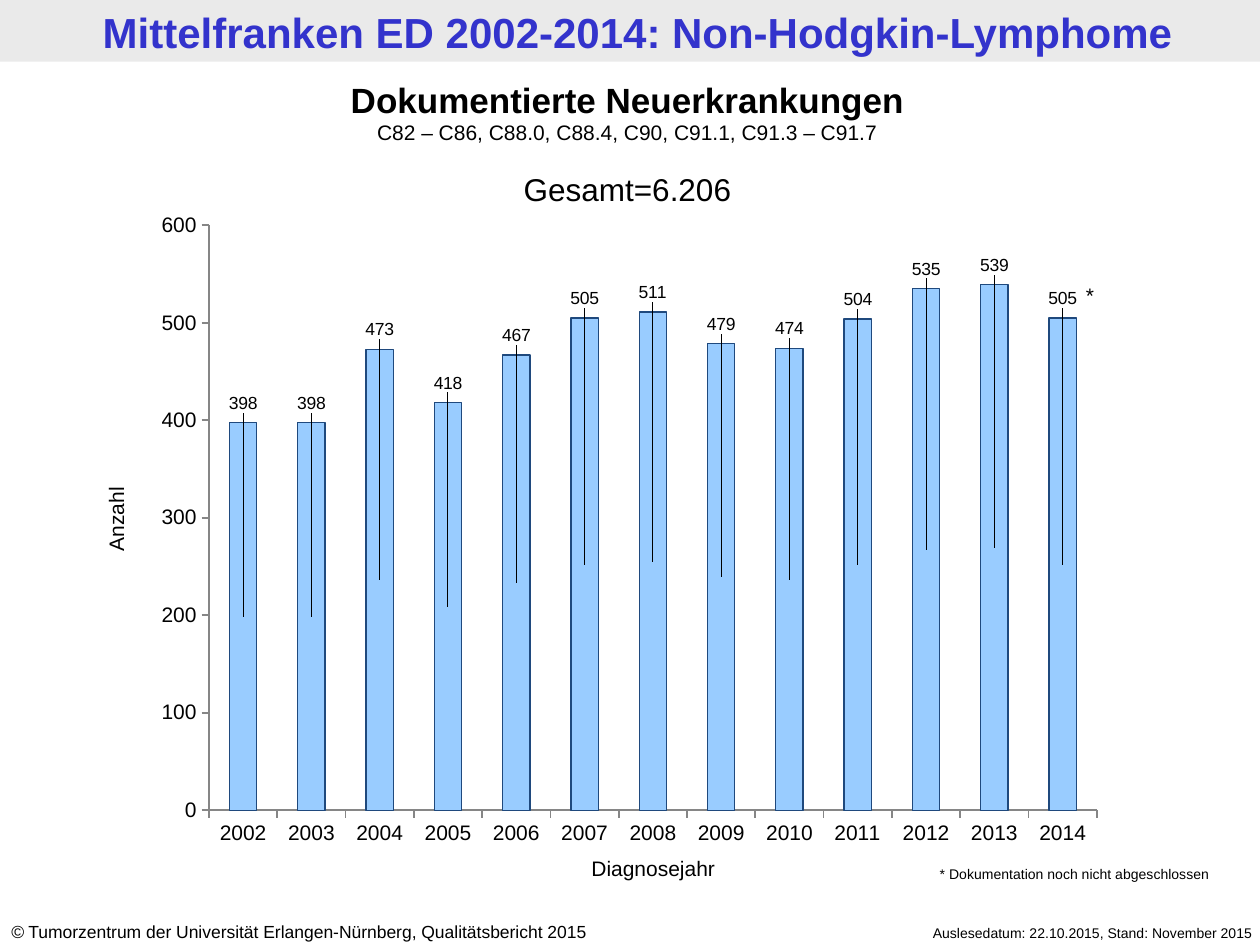
"""Build the slide on newly documented non-Hodgkin lymphomas in Mittelfranken."""
from dataclasses import dataclass

from lxml.etree import SubElement
from pptx import Presentation
from pptx.chart.data import CategoryChartData
from pptx.dml.color import RGBColor
from pptx.enum.chart import XL_CHART_TYPE, XL_LABEL_POSITION, XL_TICK_MARK
from pptx.enum.shapes import MSO_SHAPE
from pptx.enum.text import MSO_ANCHOR, PP_ALIGN
from pptx.oxml.ns import qn
from pptx.util import Inches, Pt

FONT = "Arial"
COLORS = {
    "band": "EAEAEA",
    "title": "3333CC",
    "text": "000000",
    "bar": "99CCFF",
    "bar_line": "1F497D",
    "axis": "868686",
}
YEARS = range(2002, 2015)
CASES = (398, 398, 473, 418, 467, 505, 511, 479, 474, 504, 535, 539, 505)
AXIS_MAX = 600
PLOT = {"x": 0.066, "y": 0.029, "w": 0.914, "h": 0.903}
LABEL_GAP = 0.03


@dataclass
class Label:
    text: str
    left: float
    top: float
    width: float
    height: float
    size: float = 12
    align: PP_ALIGN = PP_ALIGN.CENTER
    rotation: float = 0


LABELS = (
    Label("Auslesedatum: 22.10.2015, Stand: November 2015",
          6.65, 7.29, 3.39, 0.24, 8, PP_ALIGN.RIGHT),
    Label("Diagnosejahr", 4.06, 6.74, 2.25, 0.3),
    Label("Anzahl", 0.31, 3.97, 1.22, 0.3, rotation=270),
    Label("*", 8.39, 2.19, 0.39, 0.3, align=PP_ALIGN.RIGHT),
    Label("* Dokumentation noch nicht abgeschlossen",
          7.36, 6.82, 2.48, 0.24, 8, PP_ALIGN.LEFT),
)


def rgb(name: str) -> RGBColor:
    return RGBColor.from_string(COLORS[name])


def style(font, size: float, color: str = "text", bold: bool = False, italic: bool = False) -> None:
    font.name, font.size = FONT, Pt(size)
    font.bold, font.italic = bold, italic
    font.color.rgb = rgb(color)


def add_run(p, text: str, **fmt) -> None:
    r = p.add_run()
    r.text = text
    style(r.font, **fmt)


def add_box(slide, left: float, top: float, width: float, height: float):
    sp = slide.shapes.add_textbox(Inches(left), Inches(top), Inches(width), Inches(height))
    sp.text_frame.word_wrap = True
    return sp


def add_label(slide, label: Label) -> None:
    sp = add_box(slide, label.left, label.top, label.width, label.height)
    sp.rotation = label.rotation
    p = sp.text_frame.paragraphs[0]
    p.alignment = label.align
    add_run(p, label.text, size=label.size)


def add_title(slide) -> None:
    band = slide.shapes.add_shape(MSO_SHAPE.RECTANGLE, 0, 0, Inches(10), Inches(0.49))
    band.shadow.inherit = False
    band.fill.solid()
    band.fill.fore_color.rgb = rgb("band")
    band.line.fill.background()
    title = slide.shapes.title
    band._element.addnext(title._element)
    title.left, title.top = Inches(0.06), Inches(0.01)
    title.width, title.height = Inches(10), Inches(0.49)
    tf = title.text_frame
    tf.vertical_anchor = MSO_ANCHOR.TOP
    tf.margin_top = tf.margin_bottom = Inches(0.04)
    p = tf.paragraphs[0]
    p.alignment = PP_ALIGN.CENTER
    add_run(p, "Mittelfranken ED 2002-2014: Non-Hodgkin-Lymphome", size=24, color="title", bold=True)


def add_heading(slide) -> None:
    tf = add_box(slide, -0.04, 0.57, 10.04, 1.14).text_frame
    lines = (
        ("Dokumentierte Neuerkrankungen", 20, True, 0),
        ("C82 – C86, C88.0, C88.4, C90, C91.1, C91.3 – C91.7", 12, False, 0),
        ("Gesamt=6.206", 18, False, 14),
    )
    for i, (text, size, bold, before) in enumerate(lines):
        p = tf.add_paragraph() if i else tf.paragraphs[0]
        p.alignment = PP_ALIGN.CENTER
        if before:
            p.space_before = Pt(before)
        add_run(p, text, size=size, bold=bold)


def add_layout(parent, index: int, **values) -> None:
    layout = SubElement(parent, qn("c:layout"))
    parent.insert(index, layout)
    manual = SubElement(layout, qn("c:manualLayout"))
    for tag, value in values.items():
        SubElement(manual, qn(f"c:{tag}")).set("val", str(value))


def add_bar_labels(series) -> None:
    for point, cases in zip(series.points, CASES):
        point.data_label.position = XL_LABEL_POSITION.CENTER
        style(point.data_label.font, 10)
    for dlbl, cases in zip(series._element.iter(qn("c:dLbl")), CASES):
        rise = cases / AXIS_MAX * PLOT["h"] / 2 + LABEL_GAP
        for old in dlbl.findall(qn("c:layout")):
            dlbl.remove(old)
        add_layout(dlbl, 1, x=0, y=round(-rise, 3))
    labels = series.data_labels
    labels.show_value = True
    style(labels.font, 10)


def add_cases_chart(slide) -> None:
    data = CategoryChartData()
    data.categories = [str(year) for year in YEARS]
    data.add_series("Series 1", CASES)
    chart = slide.shapes.add_chart(
        XL_CHART_TYPE.COLUMN_STACKED, Inches(1.15), Inches(1.64), Inches(7.71), Inches(5.14), data
    ).chart
    chart.has_legend = chart.has_title = False
    style(chart.font, 12)
    plot = chart.plots[0]
    plot.gap_width, plot.overlap, plot.vary_by_categories = 150, 100, False
    area = plot._element.getparent()
    for old in area.findall(qn("c:layout")):
        area.remove(old)
    add_layout(area, 0, layoutTarget="inner", xMode="edge", yMode="edge", **PLOT)

    for axis in (chart.category_axis, chart.value_axis):
        axis.has_major_gridlines = False
        axis.major_tick_mark = XL_TICK_MARK.OUTSIDE
        axis.minor_tick_mark = XL_TICK_MARK.NONE
        axis.format.line.color.rgb = rgb("axis")
        axis.format.line.width = Pt(1)
    value_axis = chart.value_axis
    value_axis.minimum_scale, value_axis.maximum_scale, value_axis.major_unit = 0, AXIS_MAX, 100

    series = plot.series[0]
    series.format.fill.solid()
    series.format.fill.fore_color.rgb = rgb("bar")
    series.format.line.color.rgb = rgb("bar_line")
    series.format.line.width = Pt(0.75)
    add_bar_labels(series)


def add_copyright(slide) -> None:
    p = add_box(slide, -0.01, 7.26, 5.24, 0.27).text_frame.paragraphs[0]
    add_run(p, "©", size=10, italic=True)
    add_run(p, " Tumorzentrum der Universität Erlangen-Nürnberg, Qualitätsbericht 2015", size=10)


def main() -> None:
    prs = Presentation()
    prs.slide_width, prs.slide_height = Inches(10), Inches(7.5)
    slide = prs.slides.add_slide(prs.slide_layouts[5])
    add_title(slide)
    add_cases_chart(slide)
    add_heading(slide)
    add_copyright(slide)
    for label in LABELS:
        add_label(slide, label)
    prs.save("out.pptx")


if __name__ == "__main__":
    main()
